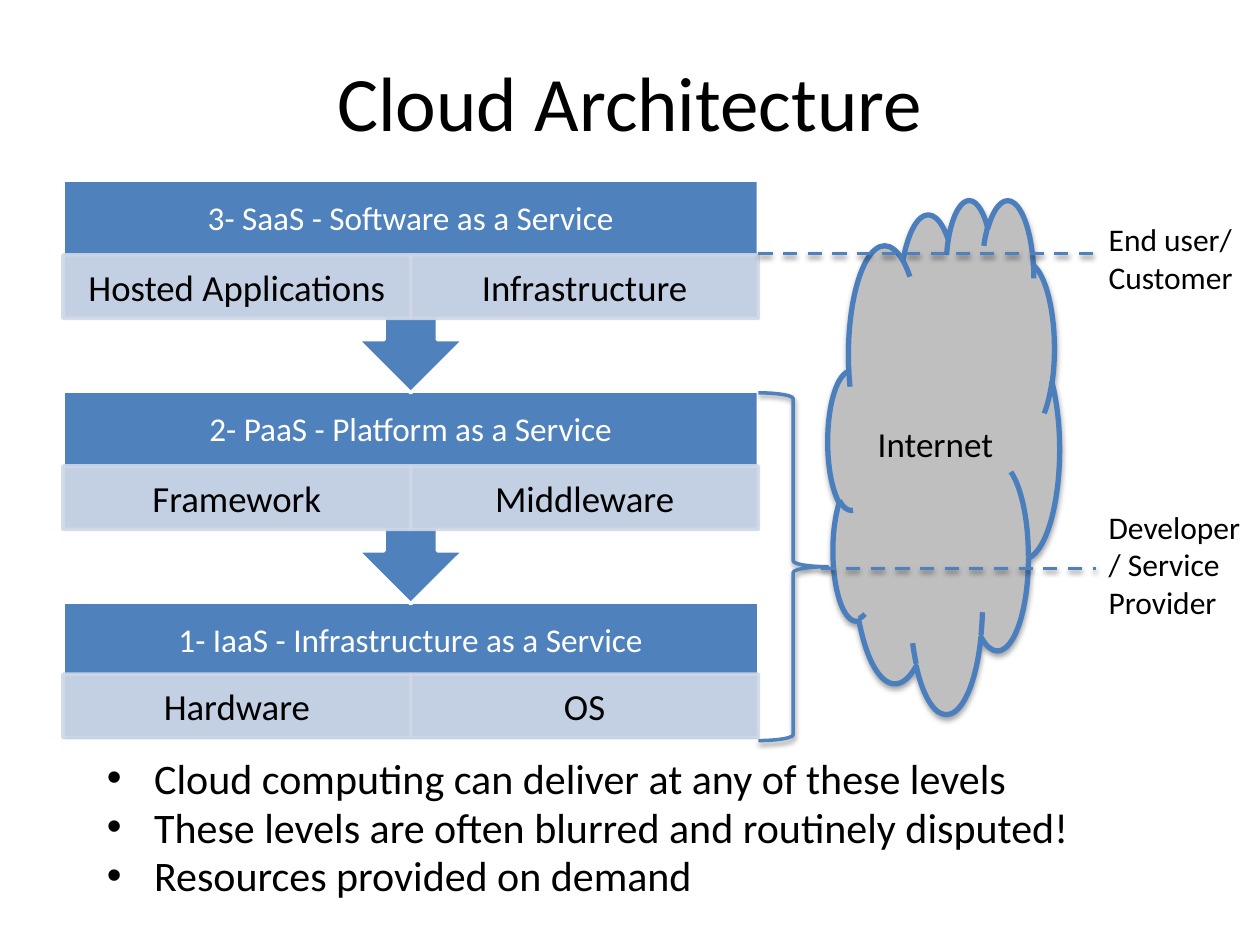
from pptx import Presentation
from pptx.dml.color import RGBColor
from pptx.enum import dml, shapes, text
from pptx.oxml.ns import qn
from pptx.util import Cm, Pt
from lxml import etree

BLUE = RGBColor(0x4F, 0x81, 0xBD)
CLOUD_EDGE = RGBColor(0x4B, 0x7E, 0xBC)
PALE = RGBColor(0xD0, 0xD8, 0xE8)
GREY = RGBColor(0xBF, 0xBF, 0xBF)
WHITE = RGBColor(0xFF, 0xFF, 0xFF)
BLACK = RGBColor(0, 0, 0)
FONT = "Calibri"

LEVELS = [
    ("3- SaaS - Software as a Service", ("Hosted Applications", "Infrastructure")),
    ("2- PaaS - Platform as a Service", ("Framework", "Middleware")),
    ("1- IaaS - Infrastructure as a Service", ("Hardware", "OS")),
]
BULLETS = [
    "Cloud computing can deliver at any of these levels",
    "These levels are often blurred and routinely disputed!",
    "Resources provided on demand",
]


def cm(*lengths):
    return [Cm(length) for length in lengths]


def write(shape, words, size, color=BLACK, align=None, anchor=None, inset=None):
    frame = shape.text_frame
    frame.text = words
    frame.word_wrap = True
    if anchor is not None:
        frame.vertical_anchor = anchor
    if inset:
        frame.margin_left = frame.margin_right = Cm(inset[0])
        frame.margin_top = frame.margin_bottom = Cm(inset[1])
    for para in frame.paragraphs:
        para.alignment = align
        for span in para.runs:
            span.font.name, span.font.size = FONT, Pt(size)
            span.font.color.rgb = color


def write_centred(shape, words, size, color=BLACK, inset=None):
    write(shape, words, size, color, text.PP_ALIGN.CENTER, text.MSO_ANCHOR.MIDDLE, inset)


def set_shadow(shape, distance, opacity):
    """Give the shape a soft shadow straight below it."""
    properties = shape._element.spPr
    for old in properties.findall(qn("a:effectLst")):
        properties.remove(old)
    effects = etree.SubElement(properties, qn("a:effectLst"))
    shadow = etree.SubElement(
        effects, qn("a:outerShdw"), blurRad=str(Pt(3.1)), dist=str(Pt(distance)),
        dir="5400000", rotWithShape="0")
    color = etree.SubElement(shadow, qn("a:srgbClr"), val="000000")
    etree.SubElement(color, qn("a:alpha"), val=str(opacity * 1000))


def add_block(page, kind, box, fill, line, width=2):
    block = page.shapes.add_shape(kind, *cm(*box))
    block.shadow.inherit = False
    if fill is None:
        block.fill.background()
    else:
        block.fill.solid()
        block.fill.fore_color.rgb = fill
    block.line.color.rgb, block.line.width = line, Pt(width)
    return block


def add_level(page, box, heading, parts, has_arrow):
    left, top, width, height = box
    # Heading block, with an arrow to the level below
    kind = shapes.MSO_SHAPE.UP_ARROW_CALLOUT if has_arrow else shapes.MSO_SHAPE.RECTANGLE
    block = add_block(page, kind, box, BLUE, WHITE)
    block.rotation = 180 if has_arrow else 0
    label = page.shapes.add_textbox(*cm(left, top, width, 1.5))
    write_centred(label, heading, 19, WHITE, (0.38, 0.38))
    # Equal cells under the heading
    cell_width = width / len(parts)
    cell_top = top + (1.51 if has_arrow else 1.45)
    for column, part in enumerate(parts):
        cell = add_block(page, shapes.MSO_SHAPE.RECTANGLE,
                         (left + column * cell_width, cell_top, cell_width, 1.28), PALE, PALE)
        for color in cell._element.spPr.iter(qn("a:srgbClr")):
            etree.SubElement(color, qn("a:alpha"), val="90000")
        write_centred(cell, part, 21, inset=(0.41, 0.08))


def add_stack(page, box):
    left, top, width, height = box
    last = len(LEVELS) - 1
    block_height = 2.79
    pitch = (height - block_height) / last
    for row in range(last, -1, -1):
        has_arrow = row < last
        add_level(page, (left, top + row * pitch, width, 4.29 if has_arrow else block_height),
                  *LEVELS[row], has_arrow)


def add_cloud(page, box):
    cloud = add_block(page, shapes.MSO_SHAPE.CLOUD, box, GREY, CLOUD_EDGE, 3)
    set_shadow(cloud, 1.8, 35)
    write_centred(cloud, "Internet", 20)


def add_user(page, box, line_left, line_y, words):
    """Dashed line through the cloud to the name of a user."""
    line = page.shapes.add_connector(
        shapes.MSO_CONNECTOR.STRAIGHT, *cm(line_left, line_y, box[0], line_y))
    line.line.color.rgb, line.line.width = BLUE, Pt(2)
    line.line.dash_style = dml.MSO_LINE.DASH
    set_shadow(line, 1.6, 38)
    write(page.shapes.add_textbox(*cm(*box)), words, 18)


def place(holder, box):
    holder.left, holder.top, holder.width, holder.height = cm(*box)


def add_title(page, box):
    place(page.shapes.title, box)
    write_centred(page.shapes.title, "Cloud Architecture", 44)


def add_bullets(page, box):
    body = page.placeholders[1]
    place(body, box)
    write(body, "\n".join(BULLETS), 24)
    body.text_frame.auto_size = text.MSO_AUTO_SIZE.NONE
    for para in body.text_frame.paragraphs:
        para.line_spacing, para.space_before = 0.8, Pt(4.8)


def main():
    deck = Presentation()
    deck.slide_width, deck.slide_height = cm(25.4, 19.05)
    page = deck.slides.add_slide(deck.slide_layouts[1])

    add_title(page, (1.27, 0.43, 22.86, 3.18))
    add_cloud(page, (16.69, 4.01, 4.67, 10.36))
    add_stack(page, (1.27, 3.63, 14.02, 11.3))
    add_bullets(page, (1.9, 15.24, 22.02, 3.33))
    # Brace around the two lower levels
    brace = add_block(page, shapes.MSO_SHAPE.RIGHT_BRACE, (15.29, 7.92, 1.4, 7.01), None, BLUE)
    set_shadow(brace, 1.6, 38)
    # Users of the levels
    add_user(page, (22.1, 4.32, 3.3, 1.8), 15.29, 5.11, "End user/\vCustomer")
    add_user(page, (22.1, 10.11, 3.3, 2.57), 16.56, 11.46, "Developer/ Service Provider")

    deck.save("out.pptx")


if __name__ == "__main__":
    main()
